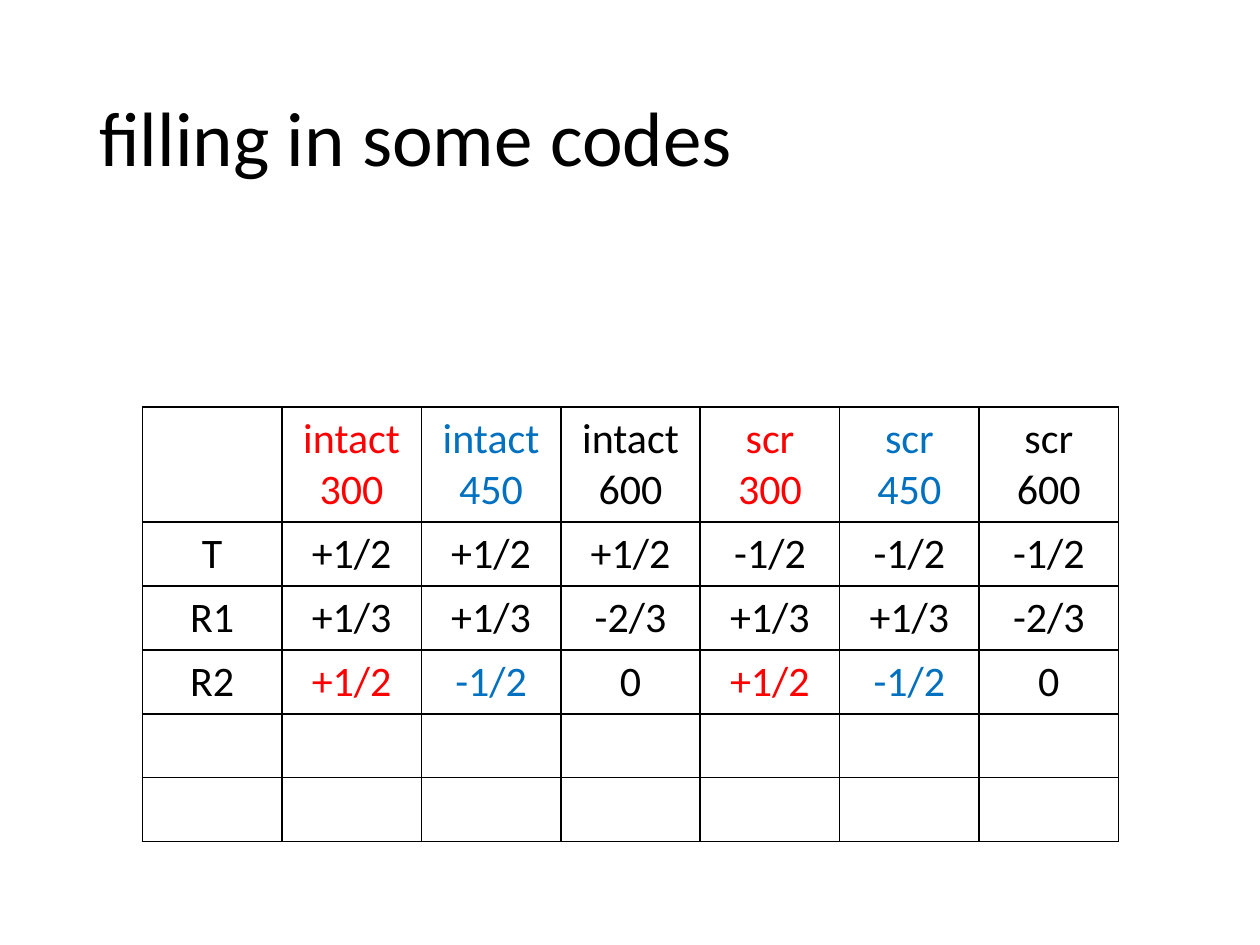
"""Build the slide with a table of contrast codes for six conditions."""
from dataclasses import dataclass

from lxml import etree
from pptx import Presentation
from pptx import util as u
from pptx.dml import color
from pptx.enum import text
from pptx.oxml import ns


@dataclass(frozen=True)
class Theme:
    font: str = "Calibri"
    black: str = "000000"
    red: str = "FF0000"
    blue: str = "0070C0"
    title: int = 44
    body: int = 24
    line: int = 1


THEME = Theme()
TINTS = (THEME.red, THEME.blue, THEME.black)
HEADS = [f"{kind}\n{size}" for kind in ("intact", "scr") for size in (300, 450, 600)]
ROWS = [
    ["", *HEADS],
    ["T", *["+1/2"] * 3, *["-1/2"] * 3],
    ["R1", *["+1/3", "+1/3", "-2/3"] * 2],
    ["R2", *["+1/2", "-1/2", "0"] * 2],
    [""] * 7,
    [""] * 7,
]
TINTED = (0, 3)
HEAD_HIGH, ROW_HIGH, COL_WIDE = 65.8, 36.5, 79.7


def add_run(para, words, size, tint):
    run = para.add_run()
    run.text = words
    run.font.name = THEME.font
    run.font.size = u.Pt(size)
    run.font.color.rgb = color.RGBColor.from_string(tint)


def add_title(slide, words):
    title = slide.shapes.title
    title.left, title.top = u.Pt(49.5), u.Pt(28.8)
    title.width, title.height = u.Pt(621), u.Pt(104.4)
    title.text_frame.vertical_anchor = text.MSO_ANCHOR.MIDDLE
    para = title.text_frame.paragraphs[0]
    para.alignment = text.PP_ALIGN.LEFT
    para.line_spacing = 0.9
    add_run(para, words, THEME.title, THEME.black)


def add_edges(cell):
    props = cell._tc.get_or_add_tcPr()
    for side in ("lnL", "lnR", "lnT", "lnB"):
        line = etree.SubElement(props, ns.qn(f"a:{side}"), w=str(u.Pt(THEME.line)))
        fill = etree.SubElement(line, ns.qn("a:solidFill"))
        etree.SubElement(fill, ns.qn("a:srgbClr"), val=THEME.black)


def fill_cell(cell, words, tint):
    add_edges(cell)
    cell.fill.background()
    frame = cell.text_frame
    for i, part in enumerate(words.split("\n") if words else []):
        para = frame.add_paragraph() if i else frame.paragraphs[0]
        para.alignment = text.PP_ALIGN.CENTER
        add_run(para, part, THEME.body, tint)


def add_codes(slide, rows):
    highs = [HEAD_HIGH] + [ROW_HIGH] * (len(rows) - 1)
    count = len(rows[0])
    table = slide.shapes.add_table(
        len(rows), count, u.Pt(81.4), u.Pt(232.6),
        u.Pt(COL_WIDE * count), u.Pt(sum(highs)),
    ).table
    table.first_row = table.horz_banding = False
    for col in table.columns:
        col.width = u.Pt(COL_WIDE)
    for r, (row, high) in enumerate(zip(rows, highs)):
        table.rows[r].height = u.Pt(high)
        for c, words in enumerate(row):
            tint = TINTS[(c - 1) % 3] if c and r in TINTED else THEME.black
            fill_cell(table.cell(r, c), words, tint)


def main():
    deck = Presentation()
    deck.slide_width, deck.slide_height = u.Pt(720), u.Pt(540)
    slide = deck.slides.add_slide(deck.slide_layouts[5])
    add_title(slide, "filling in some codes")
    add_codes(slide, ROWS)
    deck.save("out.pptx")


if __name__ == "__main__":
    main()
